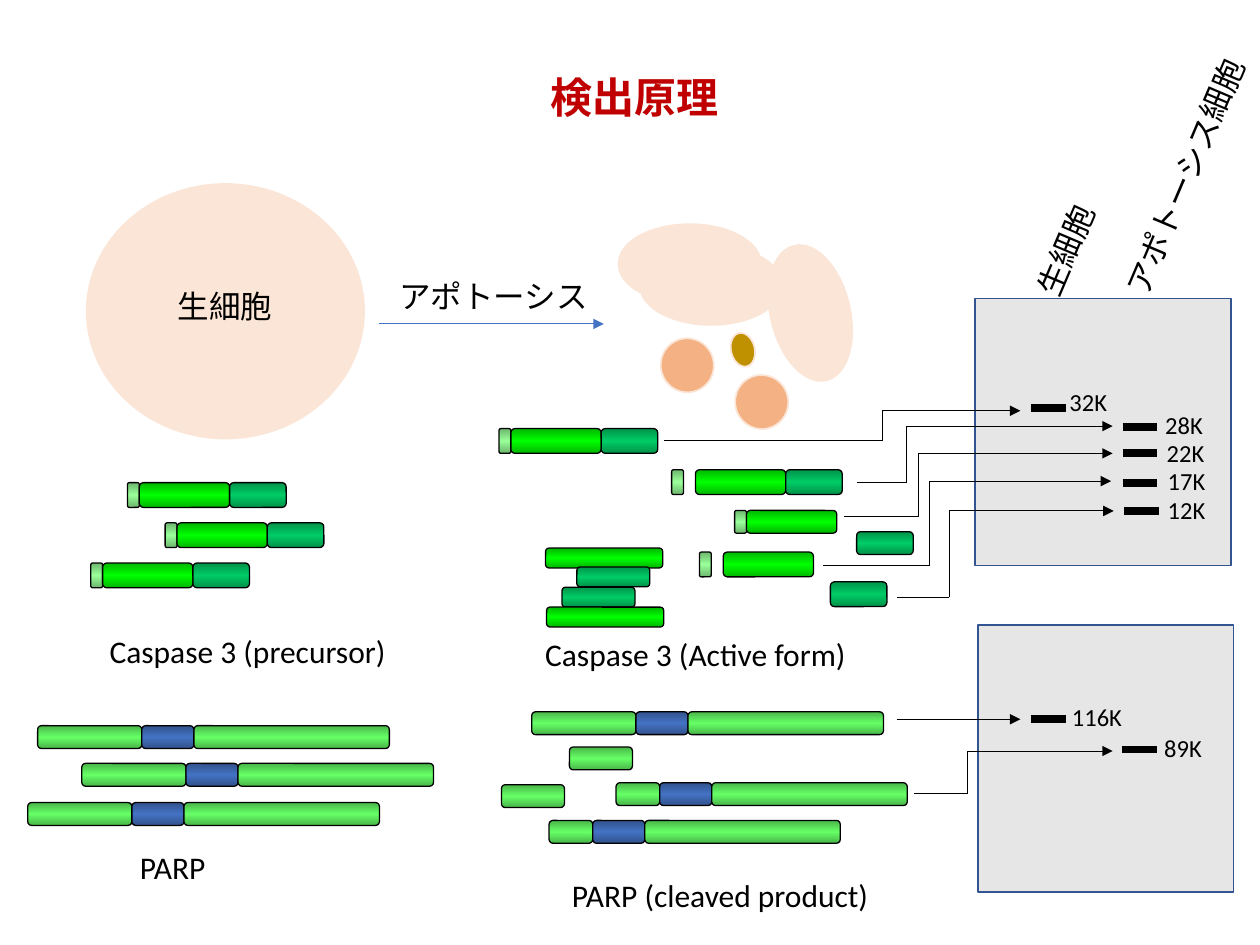
"""Draw the detection principle of apoptosis: cleaved proteins and their gel bands."""
from copy import deepcopy

from lxml.etree import SubElement
from pptx import Presentation
from pptx.dml.color import RGBColor
from pptx.enum.shapes import MSO_CONNECTOR as CONN, MSO_SHAPE as SHAPE
from pptx.enum.text import MSO_AUTO_SIZE as AUTO
from pptx.oxml.ns import qn
from pptx.util import Cm, Pt

BLACK = RGBColor(0x00, 0x00, 0x00)
RED = RGBColor(0xC0, 0x00, 0x00)
BLUE = RGBColor(0x44, 0x72, 0xC4)
NAVY = RGBColor(0x32, 0x54, 0x91)
GREY = RGBColor(0xE7, 0xE6, 0xE6)
SKIN = RGBColor(0xFB, 0xE5, 0xD6)
ORANGE = RGBColor(0xF4, 0xB1, 0x83)
GOLD = RGBColor(0xBF, 0x90, 0x00)
PALE = (RGBColor(0x6D, 0xB6, 0x6D), RGBColor(0x99, 0xFF, 0x99))
BRIGHT = (RGBColor(0x00, 0xB6, 0x00), RGBColor(0x00, 0xFF, 0x00))
DEEP = (RGBColor(0x00, 0x92, 0x49), RGBColor(0x00, 0xCC, 0x66))
LIME = (RGBColor(0x49, 0xB6, 0x49), RGBColor(0x66, 0xFF, 0x66))
INDIGO = (RGBColor(0x31, 0x52, 0x8C), BLUE)

PRO, LARGE, SMALL = (0.24, PALE), (1.82, BRIGHT), (1.14, DEEP)
LARGE_ACTIVE, SMALL_ACTIVE = (2.36, BRIGHT), (1.47, DEEP)
HEAD, SITE, TAIL = (2.1, LIME), (1.05, INDIGO), (3.94, LIME)
HEAD_CUT, HEAD_FREE = (0.88, LIME), (1.27, LIME)


class Diagram:
    """Hold the text style and the slide being drawn."""

    font = "Calibri"

    def __init__(self, slide):
        self.shapes = slide.shapes

    def shape(self, kind, x, y, w, h, line, width=1.0):
        sp = self.shapes.add_shape(kind, Cm(x), Cm(y), Cm(w), Cm(h))
        sp.shadow.inherit = False
        sp.line.color.rgb = line
        sp.line.width = Pt(width)
        return sp

    def solid(self, kind, x, y, w, h, fill, line, rotation=0):
        sp = self.shape(kind, x, y, w, h, line)
        sp.fill.solid()
        sp.fill.fore_color.rgb = fill
        sp.rotation = rotation

    def segment(self, x, y, w, h, shades):
        sp = self.shape(SHAPE.ROUNDED_RECTANGLE, x, y, w, h, BLACK, 0.75)
        edge, middle = shades
        sp.fill.gradient()
        sp.fill.gradient_angle = 90
        stops = next(sp._element.spPr.iter(qn("a:gsLst")))
        stops.append(deepcopy(stops[0]))
        for i, (stop, color) in enumerate(zip(sp.fill.gradient_stops, (edge, middle, edge))):
            stop.position = i / 2
            stop.color.rgb = color

    def protein(self, x, y, parts, h=0.46):
        for w, shades in parts:
            self.segment(x, y, w, h, shades)
            x += w

    def line(self, start, end, color=BLACK, width=0.5, arrow=False):
        (x1, y1), (x2, y2) = start, end
        cxn = self.shapes.add_connector(CONN.STRAIGHT, Cm(x1), Cm(y1), Cm(x2), Cm(y2))
        cxn.line.color.rgb = color
        cxn.line.width = Pt(width)
        if arrow:
            SubElement(cxn.line._get_or_add_ln(), qn("a:tailEnd"), type="triangle")
        SubElement(cxn._element.spPr, qn("a:effectLst"))

    def route(self, start, bend, end):
        corners = [start, (bend, start[1]), (bend, end[1]), end]
        for i in range(3):
            self.line(corners[i], corners[i + 1], arrow=i == 2)

    def text(self, x, y, w, text, size=18, h=1.02, color=BLACK, bold=False, rotation=0):
        sp = self.shapes.add_textbox(Cm(x), Cm(y), Cm(w), Cm(h))
        sp.rotation = rotation
        tf = sp.text_frame
        tf.word_wrap = False
        tf.auto_size = AUTO.SHAPE_TO_FIT_TEXT
        tf.text = text
        r = tf.paragraphs[0].runs[0]
        r.font.name = self.font
        r.font.size = Pt(size)
        r.font.bold = bold
        r.font.color.rgb = color

    def band(self, x, y, label, label_x, label_y, label_w=1.27):
        self.line((x, y), (x + 0.7, y), width=4.5)
        self.text(label_x, label_y, label_w, label, size=14, h=0.86)


def draw_cells(d):
    cells = [
        (1.75, 3.71, 5.59, 5.13, SKIN, 0),
        (12.47, 4.52, 2.87, 1.6, SKIN, 0),
        (12.9, 4.95, 2.87, 1.6, SKIN, 0),
        (14.94, 5.51, 2.79, 1.6, SKIN, 76.5),
        (13.31, 6.83, 1.09, 1.07, ORANGE, 76.5),
        (14.81, 7.57, 1.09, 1.07, ORANGE, 76.5),
        (14.63, 6.81, 0.69, 0.48, GOLD, 76.5),
    ]
    for x, y, w, h, fill, rotation in cells:
        d.solid(SHAPE.OVAL, x, y, w, h, fill, SKIN, rotation)
    d.line((7.65, 6.53), (12.17, 6.53), BLUE, arrow=True)
    d.text(7.8, 5.46, 4.37, "アポトーシス")
    d.text(3.33, 5.66, 2.44, "生細胞")


def draw_proteins(d):
    for x, y in [(2.57, 9.73), (3.33, 10.54), (1.83, 11.35), (10.06, 8.64)]:
        d.protein(x, y, [PRO, LARGE, SMALL], 0.5)
    caspase_fragments = [
        (13.54, 9.47, [PRO], 0.5),
        (14.02, 9.47, [LARGE, SMALL], 0.5),
        (14.81, 10.29, [PRO, LARGE], 0.46),
        (17.27, 10.72, [SMALL], 0.46),
        (14.1, 11.13, [PRO], 0.5),
        (14.58, 11.13, [LARGE], 0.5),
        (16.74, 11.73, [SMALL], 0.5),
        (11, 11.05, [LARGE_ACTIVE], 0.4),
        (11.63, 11.43, [SMALL_ACTIVE], 0.4),
        (11.33, 11.84, [SMALL_ACTIVE], 0.4),
        (11.02, 12.24, [LARGE_ACTIVE], 0.4),
    ]
    for x, y, parts, h in caspase_fragments:
        d.protein(x, y, parts, h)
    for x, y in [(0.76, 14.63), (1.65, 15.39), (0.56, 16.18), (10.72, 14.35)]:
        d.protein(x, y, [HEAD, SITE, TAIL])
    for x, y in [(12.42, 15.78), (11.07, 16.54)]:
        d.protein(x, y, [HEAD_CUT, SITE, TAIL])
    for x, y in [(11.48, 15.06), (10.11, 15.82)]:
        d.protein(x, y, [HEAD_FREE])
    d.text(1.96, 12.62, 6.15, "Caspase 3 (precursor)")
    d.text(10.74, 12.67, 6.65, "Caspase 3 (Active form)")
    d.text(2.57, 16.97, 1.85, "PARP")
    d.text(11.28, 17.53, 6.55, "PARP (cleaved product)")


def draw_gels(d):
    for x, y in [(19.66, 6.02), (19.71, 12.6)]:
        d.solid(SHAPE.RECTANGLE, x, y, 5.16, 5.38, GREY, NAVY)
    d.text(20.27, 4.52, 2.44, "生細胞", rotation=293)
    d.text(21.08, 3.02, 5.64, "アポトーシス細胞", rotation=293)
    d.band(20.78, 8.23, "32K", 21.31, 7.67)
    d.band(22.63, 8.61, "28K", 23.24, 8.15)
    d.band(22.63, 9.14, "22K", 23.27, 8.71)
    d.band(22.63, 9.73, "17K", 23.29, 9.27)
    d.band(22.66, 10.31, "12K", 23.29, 9.86)
    d.band(20.78, 14.5, "116K", 21.36, 14.02, 1.52)
    d.band(22.62, 15.11, "89K", 23.22, 14.66)
    routes = [
        ((13.39, 8.88), 17.78, (20.57, 8.28)),
        ((17.27, 9.73), 18.27, (22.43, 8.59)),
        ((17.02, 10.41), 18.52, (22.43, 9.14)),
        ((16.59, 11.4), 18.73, (22.4, 9.7)),
        ((18.08, 12.04), 19.13, (22.45, 10.3)),
        ((18.42, 16), 19.51, (22.43, 15.14)),
    ]
    for start, bend, end in routes:
        d.route(start, bend, end)
    d.line((18.08, 14.5), (20.57, 14.5), arrow=True)


def main():
    prs = Presentation()
    prs.slide_width, prs.slide_height = Cm(25.4), Cm(19.05)
    d = Diagram(prs.slides.add_slide(prs.slide_layouts[6]))
    d.text(10.85, 1.32, 3.94, "検出原理", size=24, h=1.27, color=RED, bold=True)
    draw_cells(d)
    draw_proteins(d)
    draw_gels(d)
    prs.save("out.pptx")


if __name__ == "__main__":
    main()
